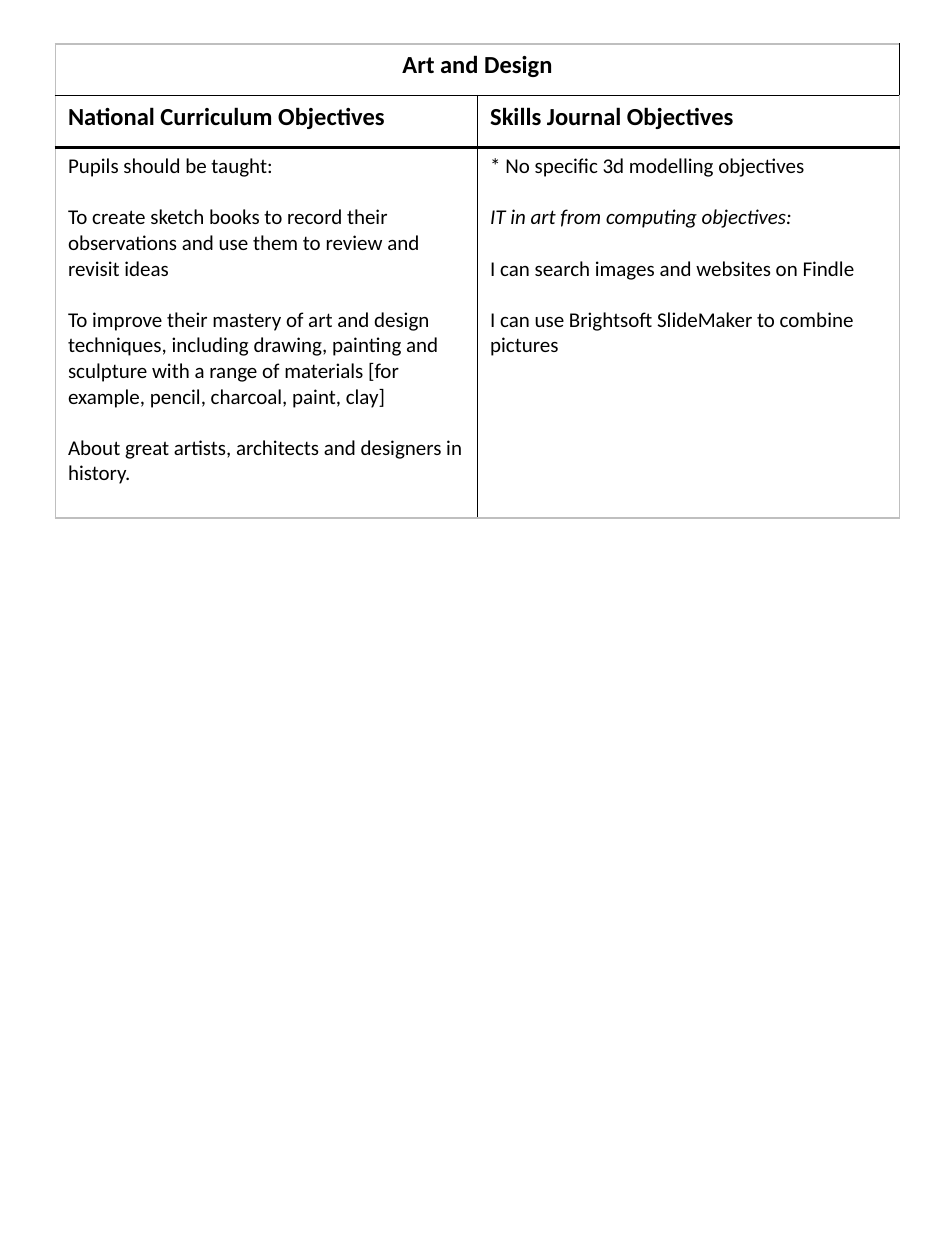
"""Build a one-page table of art and design objectives."""
import dataclasses

import pptx
import pptx.dml.color
import pptx.enum.text
import pptx.oxml
import pptx.oxml.ns
import pptx.table
import pptx.util

COLORS = {"text": "000000", "inner": "000000", "outer": "BFBFBF", "cell": "FFFFFF"}
FONT = "Calibri"
PAGE_WIDTH, PAGE_HEIGHT = 7.5, 10
TABLE_LEFT, TABLE_TOP = 0.44, 0.35
COLUMN_WIDTH = 3.35
ROW_HEIGHTS = (0.41, 0.41, 2.94)
HEADER_RULE_ROW = 2
LINE_GAP = 14.65


@dataclasses.dataclass(frozen=True)
class CellText:
    """Paragraphs of one cell and their formatting."""

    row: int
    column: int
    paragraphs: tuple[str, ...]
    size: int = 12
    bold: bool = False
    centered: bool = False
    italic_index: int | None = None


CELLS = (
    CellText(0, 0, ("Art and Design",), 14, True, True),
    CellText(1, 0, ("National Curriculum Objectives",), 14, True),
    CellText(1, 1, ("Skills Journal Objectives",), 14, True),
    CellText(2, 0, (
        "Pupils should be taught:",
        "To create sketch books to record their observations and use them to review and revisit ideas",
        "To improve their mastery of art and design techniques, including drawing, painting and "
        "sculpture with a range of materials [for example, pencil, charcoal, paint, clay]",
        "About great artists, architects and designers in history.",
    )),
    CellText(2, 1, (
        "* No specific 3d modelling objectives",
        "IT in art from computing objectives:",
        "I can search images and websites on Findle",
        "I can use Brightsoft SlideMaker to combine pictures",
    ), italic_index=1),
)


def write_cell(table: pptx.table.Table, content: CellText) -> None:
    """Write the paragraphs of a cell, one blank line's height apart."""
    frame = table.cell(content.row, content.column).text_frame
    frame.text = "\n".join(content.paragraphs)
    for index, paragraph in enumerate(frame.paragraphs):
        font = paragraph.font
        font.name = FONT
        font.size = pptx.util.Pt(content.size)
        font.bold = content.bold
        font.italic = index == content.italic_index
        font.color.rgb = pptx.dml.color.RGBColor.from_string(COLORS["text"])
        if content.centered:
            paragraph.alignment = pptx.enum.text.PP_ALIGN.CENTER
        if index:
            paragraph.space_before = pptx.util.Pt(LINE_GAP)


def style_cell(table: pptx.table.Table, row: int, column: int) -> None:
    """Fill a cell and rule its sides, grey outside and black inside."""
    cell = table.cell(row, column)
    cell.fill.solid()
    cell.fill.fore_color.rgb = pptx.dml.color.RGBColor.from_string(COLORS["cell"])
    last_row, last_column = len(table.rows) - 1, len(table.columns) - 1
    sides = (
        ("lnL", column == 0, 1),
        ("lnR", column == last_column, 1),
        ("lnT", row == 0, 1.5 if row == HEADER_RULE_ROW else 1),
        ("lnB", row == last_row, 1.5 if row + 1 == HEADER_RULE_ROW else 1),
    )
    namespace = pptx.oxml.ns.nsdecls("a")
    properties = cell._tc.get_or_add_tcPr()
    for position, (tag, is_outer, width) in enumerate(sides):
        color = COLORS["outer" if is_outer else "inner"]
        border = pptx.oxml.parse_xml(
            f'<a:{tag} {namespace} w="{int(pptx.util.Pt(width))}"><a:solidFill>'
            f'<a:srgbClr val="{color}"/></a:solidFill></a:{tag}>'
        )
        properties.insert(position, border)


def main() -> None:
    """Create and save the presentation."""
    presentation = pptx.Presentation()
    presentation.slide_width = pptx.util.Inches(PAGE_WIDTH)
    presentation.slide_height = pptx.util.Inches(PAGE_HEIGHT)
    slide = presentation.slides.add_slide(presentation.slide_layouts[6])
    lengths = (TABLE_LEFT, TABLE_TOP, 2 * COLUMN_WIDTH, sum(ROW_HEIGHTS))
    table = slide.shapes.add_table(
        len(ROW_HEIGHTS), 2, *(pptx.util.Inches(length) for length in lengths)
    ).table
    table.first_row = table.horz_banding = False
    for row, height in zip(table.rows, ROW_HEIGHTS):
        row.height = pptx.util.Inches(height)
    table.cell(0, 0).merge(table.cell(0, 1))
    for row in range(len(table.rows)):
        for column in range(len(table.columns)):
            style_cell(table, row, column)
    for content in CELLS:
        write_cell(table, content)
    presentation.save("out.pptx")


if __name__ == "__main__":
    main()
